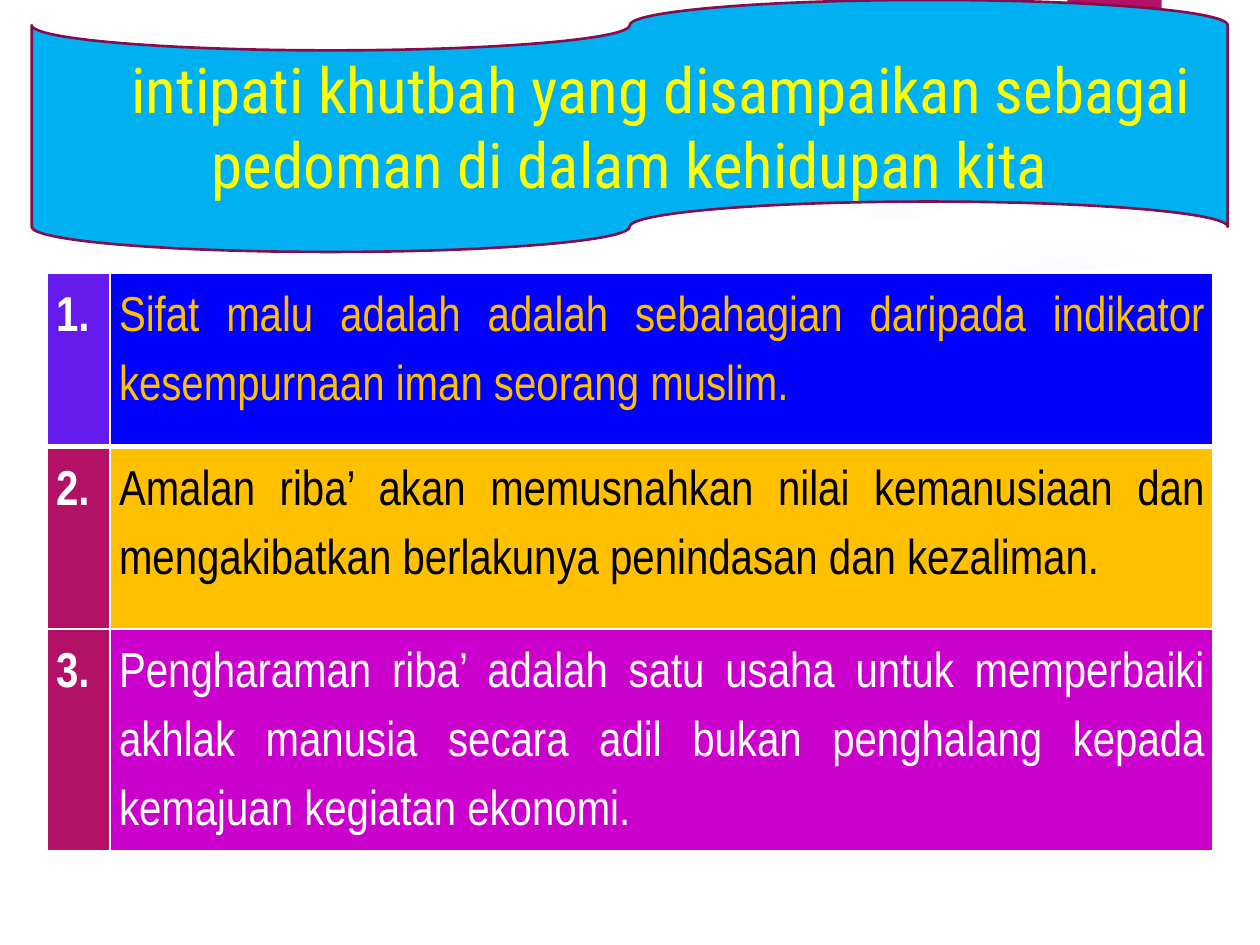
import pptx
import pptx.dml.color
import pptx.enum.shapes
import pptx.enum.text
import pptx.oxml
import pptx.oxml.ns
import pptx.util
from pptx.util import Cm

RGBColor = pptx.dml.color.RGBColor
ALIGN = pptx.enum.text.PP_ALIGN
ANCHOR = pptx.enum.text.MSO_ANCHOR
SHAPE = pptx.enum.shapes.MSO_SHAPE

WHITE = RGBColor(0xFF, 0xFF, 0xFF)
BLACK = RGBColor(0x00, 0x00, 0x00)
YELLOW = RGBColor(0xFF, 0xFF, 0x00)
AMBER = RGBColor(0xFF, 0xC0, 0x00)
SKY = RGBColor(0x00, 0xB0, 0xF0)
BLUE = RGBColor(0x00, 0x00, 0xFF)
VIOLET = RGBColor(0x65, 0x1B, 0xEB)
LILAC = RGBColor(0x9B, 0x6B, 0xF2)
RASPBERRY = RGBColor(0xB3, 0x11, 0x66)
PLUM = RGBColor(0x84, 0x0D, 0x4B)
MAGENTA = RGBColor(0xCC, 0x00, 0xCC)

WIDTH, HEIGHT = 25.4, 19.05
TITLE = "intipati khutbah yang disampaikan sebagai pedoman di dalam kehidupan kita"
# number fill, point fill, point colour, point, row height in cm
POINTS = [
    (VIOLET, BLUE, AMBER,
     "Sifat malu adalah adalah sebahagian daripada indikator "
     "kesempurnaan iman seorang muslim.", 3.5),
    (RASPBERRY, AMBER, BLACK,
     "Amalan riba’ akan memusnahkan nilai kemanusiaan dan "
     "mengakibatkan berlakunya penindasan dan kezaliman.", 3.68),
    (RASPBERRY, MAGENTA, WHITE,
     "Pengharaman riba’ adalah satu usaha untuk memperbaiki akhlak manusia "
     "secara adil bukan penghalang kepada kemajuan kegiatan ekonomi.", 4.48),
]
COLUMN_WIDTHS = (1.27, 22.23)

# left, top, diameter in cm, then (position, opacity) stops in percent
GLOWS = [
    (17.5, 4.65, 7.82, ((0, 7), (36, 6), (69, 0))),
    (15.8, 0, 4.45, ((0, 14), (36, 7), (73, 0))),
]
PANEL = [(1.35, 5.16), (1.35, 17.75), (24.05, 17.75), (24.05, 5.16),
         (21, 5.56), (17.88, 5.82), (14.91, 5.94), (12, 5.94),
         (9.42, 5.87), (7.04, 5.74), (4.39, 5.51), (2.51, 5.31)]
FRAME_OUTSIDE = [(0, 0), (0, HEIGHT), (WIDTH, HEIGHT), (WIDTH, 0)]
FRAME_INSIDE = [(24, 17.65), (1.42, 17.65), (1.42, 1.42), (24, 1.42)]


def set_attributes(target, values):
    for name, value in values.items():
        setattr(target, name, value)


def write(paragraph, text, color, **font_format):
    run = paragraph.add_run()
    run.text = text
    run.font.color.rgb = color
    set_attributes(run.font, font_format)


def paint(shape, fill):
    """Give a shape a plain fill, with no line and no shadow."""
    shape.shadow.inherit = False
    shape.fill.solid()
    shape.fill.fore_color.rgb = fill
    shape.line.fill.background()


def add_filled_shape(slide, preset, box, fill):
    shape = slide.shapes.add_shape(preset, *map(Cm, box))
    paint(shape, fill)
    return shape


def add_glow(slide, left, top, diameter, stops):
    glow = add_filled_shape(slide, SHAPE.OVAL, (left, top, diameter, diameter), LILAC)
    gradient_stops = "".join(
        f'<a:gs pos="{position * 1000}"><a:srgbClr val="{LILAC}">'
        f'<a:alpha val="{opacity * 1000}"/></a:srgbClr></a:gs>'
        for position, opacity in stops)
    gradient = pptx.oxml.parse_xml(
        f'<a:gradFill {pptx.oxml.ns.nsdecls("a")}><a:gsLst>{gradient_stops}</a:gsLst>'
        '<a:path path="circle"><a:fillToRect l="50000" t="50000" r="50000" b="50000"/>'
        '</a:path></a:gradFill>')
    properties = glow._element.spPr
    properties.replace(properties.find(pptx.oxml.ns.qn("a:solidFill")), gradient)


def add_outline(slide, *contours):
    """Add one white outline; contours after the first are holes."""
    first, *holes = [[(Cm(x), Cm(y)) for x, y in contour] for contour in contours]
    builder = slide.shapes.build_freeform(*first[0])
    builder.add_line_segments(first[1:])
    for hole in holes:
        builder.move_to(*hole[0])
        builder.add_line_segments(hole[1:])
    paint(builder.convert_to_shape(), WHITE)


def add_backdrop(slide):
    for glow in GLOWS:
        add_glow(slide, *glow)
    add_outline(slide, PANEL)
    add_outline(slide, FRAME_OUTSIDE, FRAME_INSIDE)
    add_filled_shape(slide, SHAPE.RECTANGLE, (21.52, 0, 1.9, 3.05), RASPBERRY)


def add_banner(slide):
    banner = add_filled_shape(slide, SHAPE.FLOWCHART_PUNCHED_TAPE, (0.64, 0, 24.11, 5.08), SKY)
    banner.line.color.rgb = PLUM
    banner.line.width = pptx.util.Pt(1.5)
    set_attributes(banner.text_frame, {"word_wrap": True, "vertical_anchor": ANCHOR.MIDDLE})
    title = banner.text_frame.paragraphs[0]
    title.alignment = ALIGN.CENTER
    title._p.get_or_add_pPr().set("indent", str(Cm(1.27)))
    write(title, TITLE, YELLOW, name="Roboto Condensed", size=pptx.util.Pt(36))


def set_borders(cell, widths):
    """Draw white borders; widths maps L, R, T and B to points."""
    properties = cell._tc.get_or_add_tcPr()
    for side, width in widths.items():
        properties.append(pptx.oxml.parse_xml(
            f'<a:ln{side} {pptx.oxml.ns.nsdecls("a")} w="{pptx.util.Pt(width)}">'
            f'<a:solidFill><a:srgbClr val="{WHITE}"/></a:solidFill></a:ln{side}>'))


def fill_cell(cell, text, fill, color, bold, borders):
    set_borders(cell, borders)
    cell.fill.solid()
    cell.fill.fore_color.rgb = fill
    set_attributes(cell, {"margin_left": Cm(0.18), "margin_right": Cm(0.18),
                          "margin_top": 0, "margin_bottom": 0})
    paragraph = cell.text_frame.paragraphs[0]
    set_attributes(paragraph, {"alignment": ALIGN.JUSTIFY, "line_spacing": 1.5})
    write(paragraph, text, color, name="Arial Narrow", size=pptx.util.Pt(28), bold=bold)


def add_points_table(slide):
    height = sum(point[-1] for point in POINTS)
    table = slide.shapes.add_table(len(POINTS), 2, Cm(0.95), Cm(5.5),
                                   Cm(sum(COLUMN_WIDTHS)), Cm(height)).table
    for column, width in zip(table.columns, COLUMN_WIDTHS):
        column.width = Cm(width)
    for index, (number_fill, fill, color, text, row_height) in enumerate(POINTS):
        table.rows[index].height = Cm(row_height)
        borders = {"L": 1, "R": 1, "T": 3 if index == 1 else 1, "B": 3 if index == 0 else 1}
        fill_cell(table.cell(index, 0), f"{index + 1}.", number_fill, WHITE, True, borders)
        fill_cell(table.cell(index, 1), text, fill, color, False, borders)


def main():
    presentation = pptx.Presentation()
    set_attributes(presentation, {"slide_width": Cm(WIDTH), "slide_height": Cm(HEIGHT)})
    slide = presentation.slides.add_slide(presentation.slide_layouts[6])
    add_backdrop(slide)
    add_banner(slide)
    add_points_table(slide)
    presentation.save("out.pptx")


if __name__ == "__main__":
    main()
